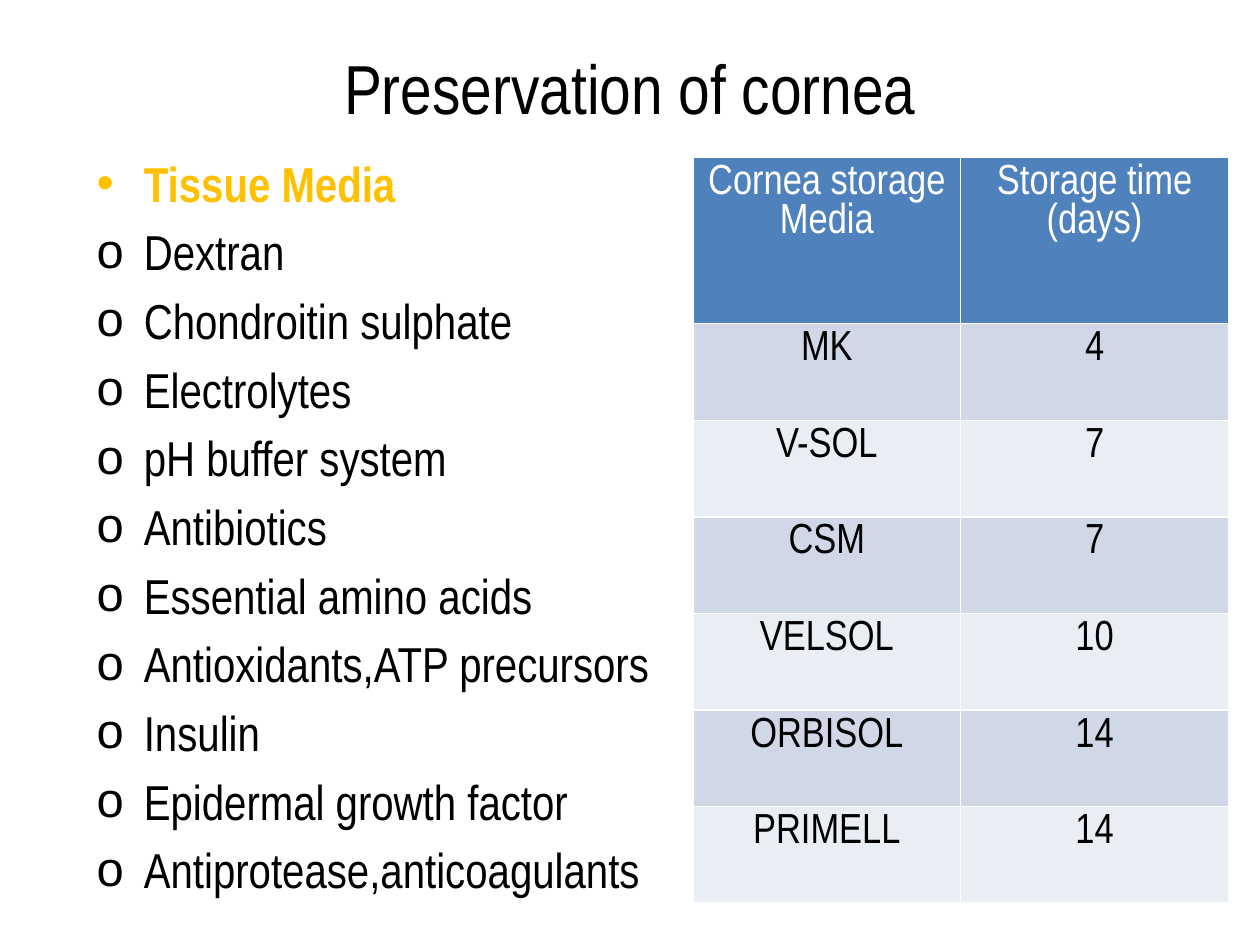
from pptx import Presentation
from pptx.dml.color import RGBColor
from pptx.enum.text import MSO_ANCHOR, MSO_AUTO_SIZE, PP_ALIGN
from pptx.oxml.xmlchemy import OxmlElement
from pptx.util import Pt

FONT = "Arial Narrow"
BLACK = RGBColor(0x00, 0x00, 0x00)
WHITE = RGBColor(0xFF, 0xFF, 0xFF)
GOLD = RGBColor(0xFF, 0xC0, 0x00)
HEADER_BLUE = RGBColor(0x4F, 0x81, 0xBD)
BAND_DARK = RGBColor(0xD0, 0xD8, 0xE8)
BAND_LIGHT = RGBColor(0xE9, 0xED, 0xF4)


def set_font(paragraph, size, color, bold=False):
    font = paragraph.font
    font.name, font.size, font.bold = FONT, Pt(size), bold
    font.color.rgb = color


def set_bullet(paragraph, character):
    properties = paragraph._p.get_or_add_pPr()
    properties.set("marL", str(Pt(27)))
    properties.set("indent", str(-Pt(27)))
    bullet_font = OxmlElement("a:buFont")
    bullet_font.set("typeface", "Arial")
    bullet = OxmlElement("a:buChar")
    bullet.set("char", character)
    # Bullet settings come before the default run properties
    properties.insert(0, bullet_font)
    properties.insert(1, bullet)


presentation = Presentation()
presentation.slide_width, presentation.slide_height = Pt(720), Pt(540)
slide = presentation.slides.add_slide(presentation.slide_layouts[1])

# Title
title = slide.shapes.title
title.left, title.top, title.width, title.height = Pt(48), Pt(21.6), Pt(624), Pt(56)
title.text_frame.auto_size = MSO_AUTO_SIZE.NONE
title.text_frame.vertical_anchor = MSO_ANCHOR.MIDDLE
title.text_frame.text = "Preservation of cornea"
set_font(title.text_frame.paragraphs[0], 39.6, BLACK)

# List of media components
components = [
    "Tissue Media",
    "Dextran",
    "Chondroitin sulphate",
    "Electrolytes",
    "pH buffer system",
    "Antibiotics",
    "Essential amino acids",
    "Antioxidants,ATP precursors",
    "Insulin",
    "Epidermal growth factor",
    "Antiprotease,anticoagulants",
]
body = slide.placeholders[1]
body.left, body.top, body.width, body.height = Pt(48), Pt(84), Pt(624), Pt(426)
body.text_frame.auto_size = MSO_AUTO_SIZE.NONE
body.text_frame.text = "\n".join(components)
for index, paragraph in enumerate(body.text_frame.paragraphs):
    is_heading = index == 0
    set_font(paragraph, 28, GOLD if is_heading else BLACK, is_heading)
    set_bullet(paragraph, "•" if is_heading else "o")

# Storage time table
storage_times = [
    ("Cornea storage Media", "Storage time (days)"),
    ("MK", "4"),
    ("V-SOL", "7"),
    ("CSM", "7"),
    ("VELSOL", "10"),
    ("ORBISOL", "14"),
    ("PRIMELL", "14"),
]
table = slide.shapes.add_table(
    len(storage_times), 2, Pt(396), Pt(90), Pt(306), Pt(426)
).table
for row_index, values in enumerate(storage_times):
    is_header = row_index == 0
    table.rows[row_index].height = Pt(95 if is_header else 55.2)
    band = BAND_DARK if row_index % 2 else BAND_LIGHT
    for column_index, value in enumerate(values):
        cell = table.cell(row_index, column_index)
        cell.fill.solid()
        cell.fill.fore_color.rgb = HEADER_BLUE if is_header else band
        cell.text = value
        paragraph = cell.text_frame.paragraphs[0]
        paragraph.alignment = PP_ALIGN.CENTER
        set_font(paragraph, 24, WHITE if is_header else BLACK)

presentation.save("out.pptx")
